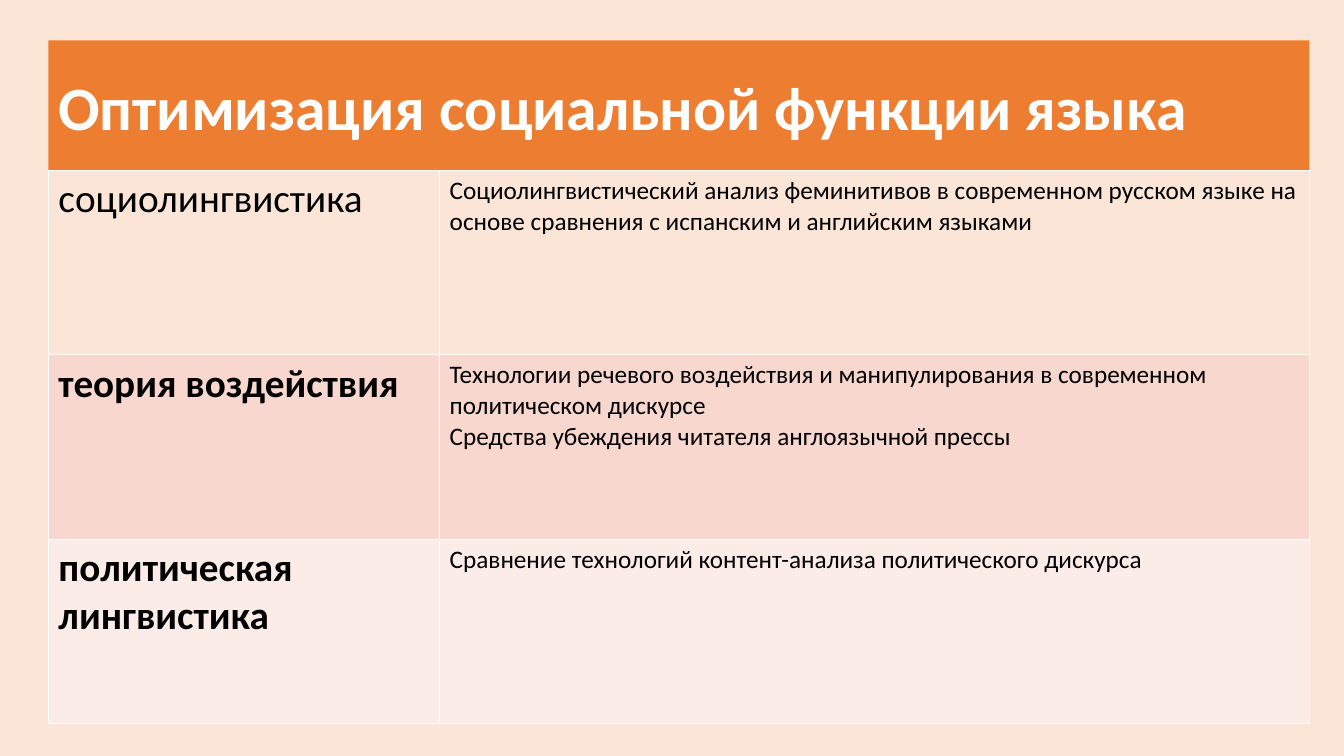
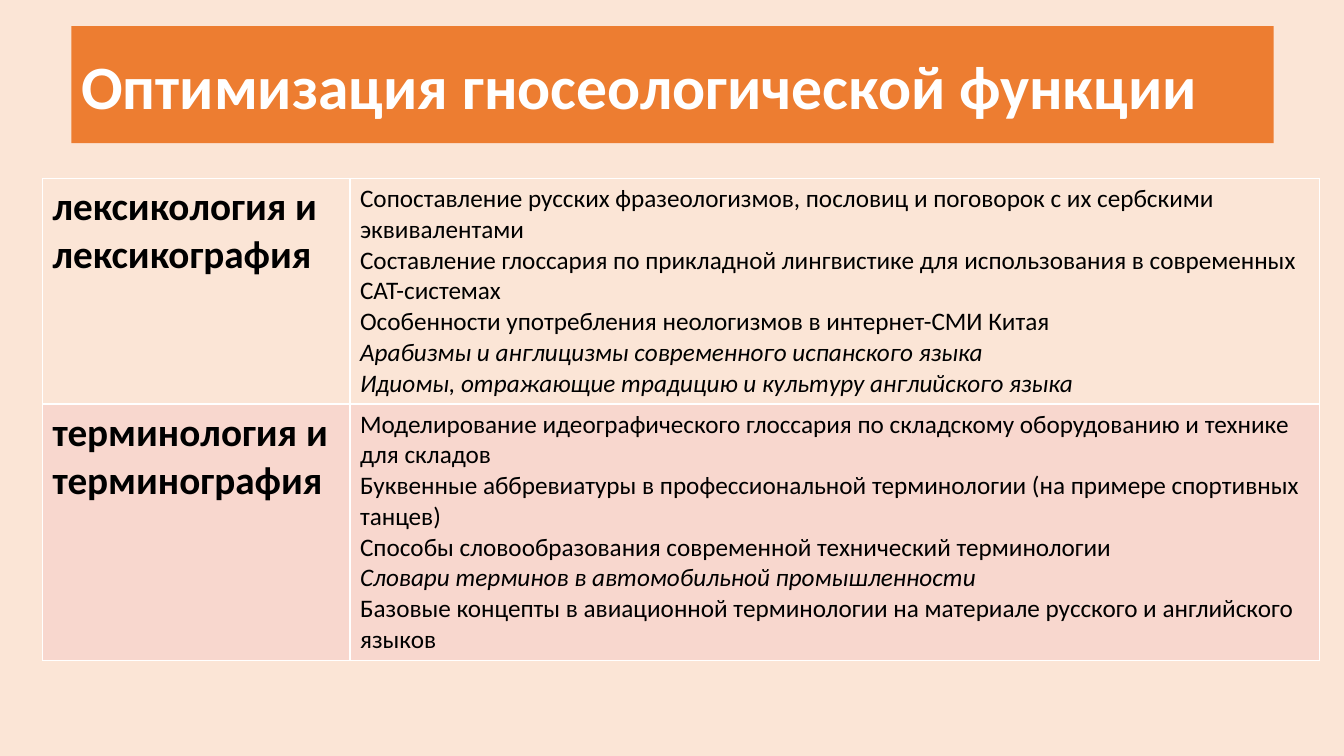
from dataclasses import dataclass
from typing import NamedTuple

from lxml.etree import SubElement
from pptx import Presentation
from pptx.dml.color import RGBColor
from pptx.enum.shapes import MSO_SHAPE as Preset
from pptx.enum.text import MSO_ANCHOR as Anchor, PP_ALIGN as Align
from pptx.oxml.ns import qn
from pptx.slide import Slide
from pptx.table import _Cell as Cell
from pptx.text.text import TextFrame
from pptx.util import Cm, Pt

FONT = "Calibri"
COLORS = {
    "background": "FBE5D6",
    "band": "ED7D31",
    "title": "FFFFFF",
    "text": "000000",
    "border": "FFFFFF",
}
ROW_FILLS = ("FBE5D6", "F8D7CE", "FCECE8")


class Box(NamedTuple):
    """A rectangle in centimetres."""
    left: float
    top: float
    width: float
    height: float


class Topic(NamedTuple):
    text: str
    italic: bool = False


@dataclass(frozen=True)
class Field:
    """A branch of linguistics with its research topics: one table row."""
    name: str
    topics: tuple[Topic, ...]
    height: float
    bold: bool = True


@dataclass(frozen=True)
class Section:
    """The content and layout of one slide."""
    title: str
    band: Box
    table_left: float
    table_top: float
    columns: tuple[float, float]
    fields: tuple[Field, ...]


SECTIONS = (
    Section(
        "Оптимизация социальной функции языка",
        Box(1.22, 1.02, 31.78, 3.28), 1.22, 4.29, (9.86, 21.92),
        (
            Field("социолингвистика", (
                Topic("Социолингвистический анализ феминитивов в современном русском языке "
                      "на основе сравнения с испанским и английским языками"),
            ), 4.65, bold=False),
            Field("теория воздействия", (
                Topic("Технологии речевого воздействия и манипулирования в современном "
                      "политическом дискурсе"),
                Topic("Средства убеждения читателя англоязычной прессы"),
            ), 4.65),
            Field("политическая лингвистика", (
                Topic("Сравнение технологий контент-анализа политического дискурса"),
            ), 4.65),
        ),
    ),
    Section(
        "Оптимизация гносеологической функции",
        Box(1.8, 0.66, 30.3, 2.95), 1.07, 4.5, (7.75, 24.43),
        (
            Field("лексикология и лексикография", (
                Topic("Сопоставление русских фразеологизмов, пословиц и поговорок "
                      "с их сербскими эквивалентами"),
                Topic("Составление глоссария по прикладной лингвистике для использования "
                      "в современных CAT-системах"),
                Topic("Особенности употребления неологизмов в интернет-СМИ Китая"),
                Topic("Арабизмы и англицизмы современного испанского языка", italic=True),
                Topic("Идиомы, отражающие традицию и культуру английского языка", italic=True),
            ), 5.67),
            Field("терминология и терминография", (
                Topic("Моделирование идеографического глоссария по складскому оборудованию "
                      "и технике для складов"),
                Topic("Буквенные аббревиатуры в профессиональной терминологии "
                      "(на примере спортивных танцев)"),
                Topic("Способы словообразования современной технический терминологии"),
                Topic("Словари терминов в автомобильной промышленности", italic=True),
                Topic("Базовые концепты в авиационной терминологии на материале русского "
                      "и английского языков"),
            ), 6.35),
        ),
    ),
)


def rgb(name: str) -> RGBColor:
    return RGBColor.from_string(COLORS[name])


def write(frame: TextFrame, text: str, *, size: float, color: str = "text",
          bold: bool = False, italic: bool = False) -> None:
    """Fill the empty first paragraph, or add another one after it."""
    first = frame.paragraphs[0]
    paragraph = frame.add_paragraph() if first.runs else first
    paragraph.alignment = Align.LEFT
    run = paragraph.add_run()
    run.text = text
    font = run.font
    font.name, font.size, font.bold, font.italic = FONT, Pt(size), bold, italic
    font.color.rgb = rgb(color)


def style_cell(cell: Cell, fill: str) -> None:
    properties = cell._tc.get_or_add_tcPr()
    for side in ("lnL", "lnR", "lnT", "lnB"):
        line = SubElement(properties, qn(f"a:{side}"), w=str(Pt(1)))
        solid = SubElement(line, qn("a:solidFill"))
        SubElement(solid, qn("a:srgbClr"), val=COLORS["border"])
    cell.fill.solid()
    cell.fill.fore_color.rgb = RGBColor.from_string(fill)


def add_title(slide: Slide, title: str, box: Box) -> None:
    band = slide.shapes.add_shape(Preset.RECTANGLE, *map(Cm, box))
    band.shadow.inherit = False
    band.fill.solid()
    band.fill.fore_color.rgb = rgb("band")
    band.line.fill.background()
    frame = band.text_frame
    frame.word_wrap = True
    frame.vertical_anchor = Anchor.MIDDLE
    write(frame, title, size=44, color="title", bold=True)


def add_fields(slide: Slide, section: Section) -> None:
    fields, columns = section.fields, section.columns
    table = slide.shapes.add_table(
        len(fields), len(columns), Cm(section.table_left), Cm(section.table_top),
        Cm(sum(columns)), Cm(sum(field.height for field in fields)),
    ).table
    table.first_row = table.horz_banding = False
    for column, width in zip(table.columns, columns):
        column.width = Cm(width)
    for row, field, fill in zip(table.rows, fields, ROW_FILLS):
        row.height = Cm(field.height)
        name_cell, topics_cell = row.cells
        for cell in (name_cell, topics_cell):
            style_cell(cell, fill)
        write(name_cell.text_frame, field.name, size=28, bold=field.bold)
        for topic in field.topics:
            write(topics_cell.text_frame, topic.text, size=18, italic=topic.italic)


def main() -> None:
    deck = Presentation()
    deck.slide_width, deck.slide_height = Cm(33.87), Cm(19.05)
    background = deck.slide_master.background.fill
    background.solid()
    background.fore_color.rgb = rgb("background")
    blank = deck.slide_layouts[6]
    for section in SECTIONS:
        slide = deck.slides.add_slide(blank)
        add_title(slide, section.title, section.band)
        add_fields(slide, section)
    deck.save("out.pptx")


if __name__ == "__main__":
    main()
